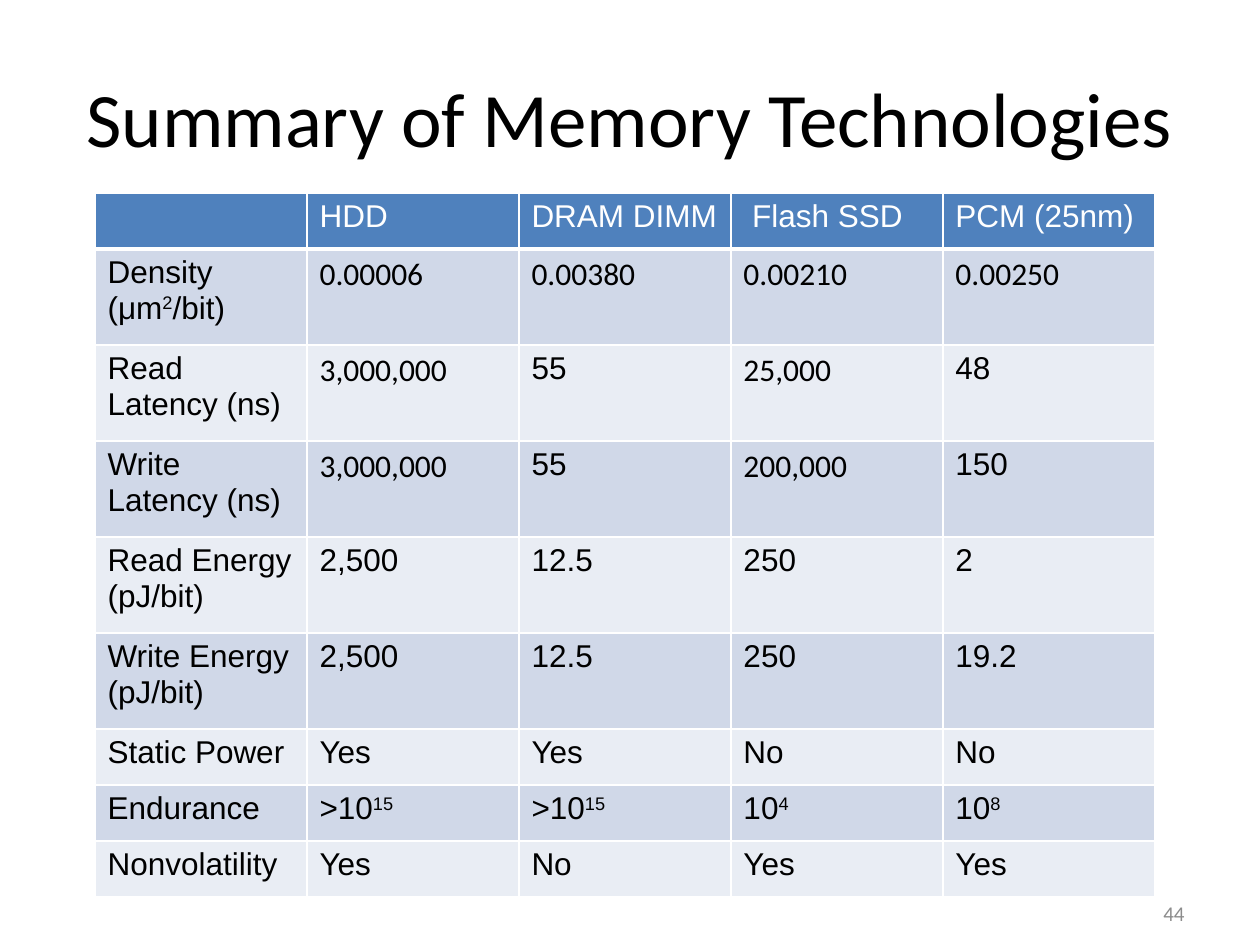
from lxml import etree
from pptx import Presentation, util as u
from pptx.dml.color import RGBColor
from pptx.enum import text
from pptx.oxml.ns import qn

# Content: "^" starts a superscript that runs to the next "^"
TITLE = "Summary of Memory Technologies"
PAGE_NUMBER = "44"
ROWS = [
    ["", "HDD", "DRAM DIMM", " Flash SSD", "PCM (25nm)"],
    ["Density (μm^2^/bit)", "0.00006", "0.00380", "0.00210", "0.00250"],
    ["Read Latency (ns)", "3,000,000", "55", "25,000", "48"],
    ["Write Latency (ns)", "3,000,000", "55", "200,000", "150"],
    ["Read Energy (pJ/bit)", "2,500", "12.5", "250", "2"],
    ["Write Energy (pJ/bit)", "2,500", "12.5", "250", "19.2"],
    ["Static Power", "Yes", "Yes", "No", "No"],
    ["Endurance", ">10^15", ">10^15", "10^4", "10^8"],
    ["Nonvolatility", "Yes", "No", "Yes", "Yes"],
]
CALIBRI_COLUMNS = {1: (1, 2, 3, 4), 2: (1, 3), 3: (1, 3)}

# Layout in px
PX = 914400 // 126
TABLE_LEFT, TABLE_TOP, COLUMN_WIDTH = 95, 193, 212
ROW_HEIGHTS = [56] + [96] * 5 + [56] * 3

HEADER, BANDS = "4F81BD", ("E9EDF4", "D0D8E8")
WHITE, BLACK, GREY = "FFFFFF", "000000", "8C8C8C"


def px(value):
    return u.Emu(value * PX)


def color(value):
    return RGBColor.from_string(value)


def style(run, size, name, fill):
    run.font.size = u.Pt(size)
    run.font.name = name
    run.font.color.rgb = color(fill)


def add_label(slide, box, words, size, fill, align):
    shape = slide.shapes.add_textbox(*map(px, box))
    frame = shape.text_frame
    frame.word_wrap = True
    frame.vertical_anchor = text.MSO_ANCHOR.MIDDLE
    frame.text = words
    paragraph = frame.paragraphs[0]
    paragraph.alignment = align
    style(paragraph.runs[0], size, "Calibri", fill)


def set_borders(cell, bottom_width):
    properties = cell._tc.get_or_add_tcPr()
    for side, width in (("L", 1), ("R", 1), ("T", 1), ("B", bottom_width)):
        line = etree.SubElement(properties, qn(f"a:ln{side}"), w=str(u.Pt(width)))
        fill = etree.SubElement(line, qn("a:solidFill"))
        etree.SubElement(fill, qn("a:srgbClr"), val=WHITE)


def fill_cell(cell, words, name, text_color, background, bottom_width):
    set_borders(cell, bottom_width)
    cell.fill.solid()
    cell.fill.fore_color.rgb = color(background)
    paragraph = cell.text_frame.paragraphs[0]
    for index, part in enumerate(words.split("^")):
        if part:
            run = paragraph.add_run()
            run.text = part
            style(run, 18, name, text_color)
            if index % 2:
                run._r.get_or_add_rPr().set("baseline", "30000")


def add_memory_table(slide):
    columns = len(ROWS[0])
    table = slide.shapes.add_table(
        len(ROWS), columns, px(TABLE_LEFT), px(TABLE_TOP),
        px(COLUMN_WIDTH * columns), px(sum(ROW_HEIGHTS))).table
    table.first_row = table.horz_banding = False
    for column in table.columns:
        column.width = px(COLUMN_WIDTH)
    for r, (row, height) in enumerate(zip(ROWS, ROW_HEIGHTS)):
        table.rows[r].height = px(height)
        look = (BLACK, BANDS[r % 2], 1) if r else (WHITE, HEADER, 3)
        for c, words in enumerate(row):
            name = "Calibri" if c in CALIBRI_COLUMNS.get(r, ()) else "Arial"
            fill_cell(table.cell(r, c), words, name, *look)


def main():
    presentation = Presentation()
    presentation.slide_width, presentation.slide_height = px(1260), px(945)
    slide = presentation.slides.add_slide(presentation.slide_layouts[6])

    # Page number, title and table
    add_label(slide, (903, 882, 294, 63), PAGE_NUMBER, 12, GREY, text.PP_ALIGN.RIGHT)
    add_label(slide, (63, 38, 1134, 158), TITLE, 44, BLACK, text.PP_ALIGN.CENTER)
    add_memory_table(slide)

    presentation.save("out.pptx")


if __name__ == "__main__":
    main()
